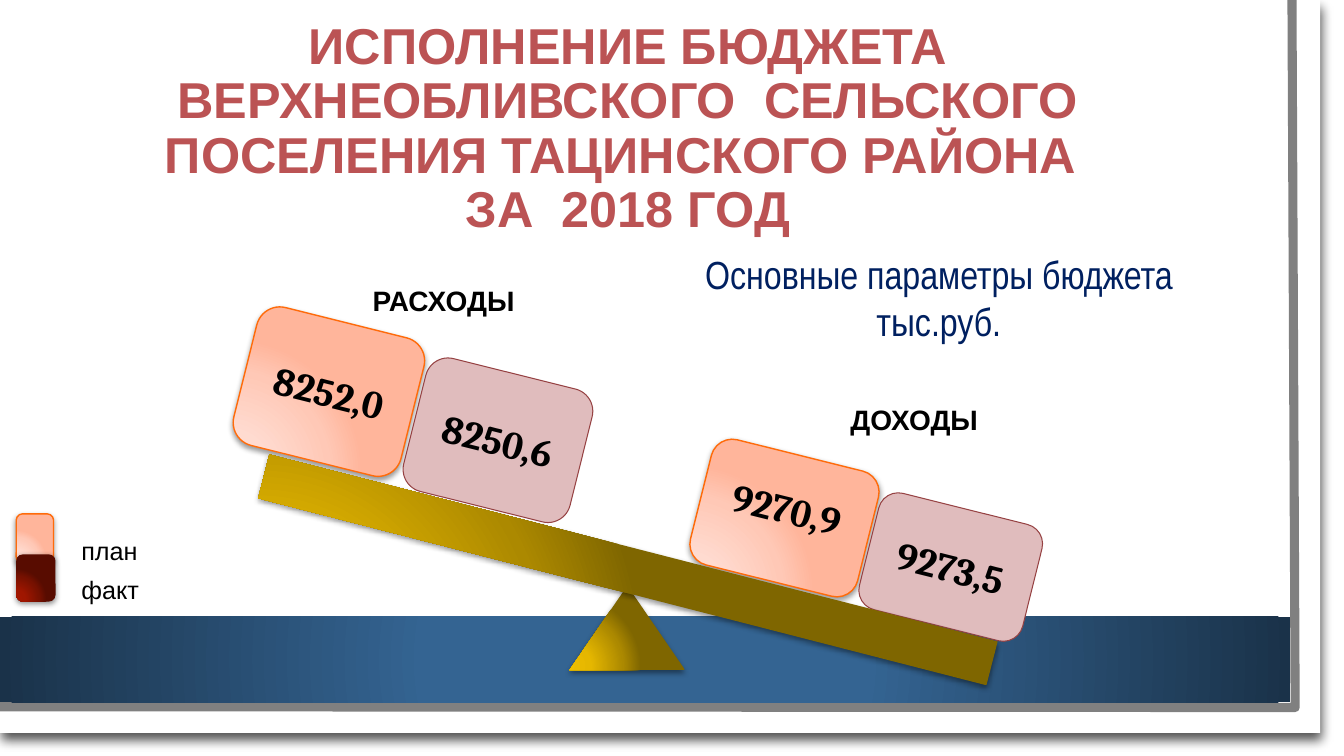
from pptx import Presentation
from pptx.dml.color import RGBColor
from pptx.enum.shapes import MSO_SHAPE
from pptx.enum.text import MSO_ANCHOR, PP_ALIGN
from pptx.oxml import parse_xml
from pptx.oxml.ns import nsdecls, qn
from pptx.util import Cm, Pt

RECT, ROUND = MSO_SHAPE.RECTANGLE, MSO_SHAPE.ROUNDED_RECTANGLE
TRIANGLE = MSO_SHAPE.ISOSCELES_TRIANGLE
TOP, MIDDLE = MSO_ANCHOR.TOP, MSO_ANCHOR.MIDDLE
LEFT, CENTER = PP_ALIGN.LEFT, PP_ALIGN.CENTER

WHITE = RGBColor(0xFF, 0xFF, 0xFF)
BLACK = RGBColor(0, 0, 0)
GRAY = RGBColor(0x80, 0x80, 0x80)
RED = RGBColor(0xBB, 0x53, 0x54)
NAVY = RGBColor(0x00, 0x20, 0x60)
PINK = RGBColor(0xE0, 0xBC, 0xBD)
WINE = RGBColor(0x96, 0x42, 0x43)
ORANGE = RGBColor(0xFF, 0x6B, 0x0A)
BLUE = RGBColor(0x34, 0x64, 0x92)
DARK_BLUE = RGBColor(0x1A, 0x32, 0x49)
GOLDS = [RGBColor.from_string(c) for c in ("EDBE00", "E5B700", "AC8900", "7F6600")]
PEACHES = [RGBColor.from_string(c) for c in ("FFDED5", "FFDBD0", "FFC8B6", "FFB59B")]
MAROONS = [RGBColor.from_string(c) for c in ("A41700", "9F1600", "771100", "580C00")]


def corner_glow(colors):
    return list(zip((0, 30, 75, 100), colors)), (5, 100, 120, 10)


GOLD, PEACH, MAROON = map(corner_glow, (GOLDS, PEACHES, MAROONS))
BAND = [(34, BLUE), (100, DARK_BLUE)], (50, 50, 50, 50)
SHEET_SHADOW = 68, 7.8, 6, 73
SOFT_SHADOW = 42, 4, 1.6, 90
PLAN = {"fill": PEACH, "line": (ORANGE, 1), "shadow": (40, 4, 2, 90)}
FACT = {"fill": PINK, "line": (WINE, 0.75)}


class BudgetSlide:
    """Draws the elements of the budget slide in its shared style."""

    formats = {
        "title": {"name": "Arial", "size": Pt(36), "bold": True},
        "subtitle": {"name": "Arial Narrow", "size": Pt(28), "bold": False},
        "value": {"name": "Cambria", "size": Pt(28), "bold": True},
        "label": {"name": "Arial", "size": Pt(20), "bold": True},
        "legend": {"name": "Arial", "size": Pt(18), "bold": False},
    }

    def __init__(self, prs):
        self.shapes = prs.slides.add_slide(prs.slide_layouts[6]).shapes

    def gradient(self, sp, stops, focus):
        gs = "".join(f'<a:gs pos="{pos * 1000}"><a:srgbClr val="{color}"/></a:gs>'
                     for pos, color in stops)
        rect = " ".join(f'{side}="{v * 1000}"' for side, v in zip("ltrb", focus))
        sp.fill.background()
        sp_pr = sp._element.spPr
        sp_pr.replace(sp_pr.find(qn("a:noFill")), parse_xml(
            f'<a:gradFill {nsdecls("a")} rotWithShape="1"><a:gsLst>{gs}</a:gsLst>'
            f'<a:path path="circle"><a:fillToRect {rect}/></a:path></a:gradFill>'))

    def shadow(self, sp, alpha, blur, dist, angle):
        sp._element.spPr.find(qn("a:effectLst")).append(parse_xml(
            f'<a:outerShdw {nsdecls("a")} blurRad="{Pt(blur)}" dist="{Pt(dist)}" '
            f'dir="{angle * 60000}" rotWithShape="0"><a:srgbClr val="000000">'
            f'<a:alpha val="{alpha * 1000}"/></a:srgbClr></a:outerShdw>'))

    def outline(self, sp, color, width):
        sp.line.color.rgb = color
        sp.line.width = Pt(width)

    def shape(self, kind, box, fill, line=None, shadow=None, rotation=0):
        sp = self.shapes.add_shape(kind, *map(Cm, box))
        sp.rotation = rotation
        sp.shadow.inherit = False
        if isinstance(fill, RGBColor):
            sp.fill.solid()
            sp.fill.fore_color.rgb = fill
        else:
            self.gradient(sp, *fill)
        if line:
            self.outline(sp, *line)
        else:
            sp.line.fill.background()
        if shadow:
            self.shadow(sp, *shadow)
        return sp

    def edge(self, points, color, width):
        start, *rest = [(Cm(x), Cm(y)) for x, y in points]
        builder = self.shapes.build_freeform(*start)
        builder.add_line_segments(rest, close=False)
        sp = builder.convert_to_shape()
        sp.fill.background()
        sp.shadow.inherit = False
        self.outline(sp, color, width)

    def set_text(self, sp, text, style, color=BLACK, align=CENTER, anchor=MIDDLE):
        tf = sp.text_frame
        tf.word_wrap = True
        tf.vertical_anchor = anchor
        p = tf.paragraphs[0]
        p.text = text
        p.alignment = align
        for r in p.runs:
            for key, value in self.formats[style].items():
                setattr(r.font, key, value)
            r.font.color.rgb = color
        return p

    def heading(self, box, text, style, color):
        return self.set_text(self.shapes.add_textbox(*map(Cm, box)), text, style, color)

    def label(self, box, text, style):
        sp = self.shapes.add_textbox(*map(Cm, box))
        self.set_text(sp, text, style, align=LEFT, anchor=TOP)

    def weight(self, box, value, look, lift=0):
        sp = self.shape(ROUND, box, rotation=14, **look)
        self.set_text(sp, value, "value")
        sp.text_frame.margin_bottom = Cm(0.13 + lift)


def main():
    prs = Presentation()
    prs.slide_width, prs.slide_height = Cm(33.87), Cm(19.05)
    s = BudgetSlide(prs)

    s.shape(RECT, (0, 0, 33.27, 18.47), WHITE, shadow=SHEET_SHADOW)
    s.edge([(32.56, 0), (32.64, 17.83), (-0.08, 17.81)], GRAY, 6.5)
    s.shape(RECT, (0, 15.54, 32.51, 2.16), BAND)

    title = s.heading((0.89, 0, 29.87, 6.53),
                      "ИСПОЛНЕНИЕ БЮДЖЕТА ВЕРХНЕОБЛИВСКОГО  СЕЛЬСКОГО "
                      "ПОСЕЛЕНИЯ ТАЦИНСКОГО РАЙОНА \vЗА  2018 ГОД", "title", RED)
    title.line_spacing = 0.9
    s.heading((14, 6.45, 19.32, 2.08),
              "Основные параметры бюджета\vтыс.руб.", "subtitle", NAVY)

    s.shape(TRIANGLE, (14.35, 14.76, 2.92, 2.13), GOLD, shadow=SOFT_SHADOW)
    s.weight((17.6, 11.43, 4.34, 3.25), "9270,9", PLAN, lift=0.5)
    s.weight((21.84, 12.78, 4.24, 3.02), "9273,5", FACT)
    s.weight((6.12, 8.08, 4.34, 3.58), "8252,0", PLAN)
    s.weight((10.39, 9.37, 4.32, 3.45), "8250,6", FACT)
    s.shape(RECT, (6.35, 13.79, 18.95, 1.14), GOLD, shadow=SOFT_SHADOW, rotation=14.4)
    s.label((21.18, 10.01, 4.57, 1.88), "ДОХОДЫ", "label")
    s.label((9.14, 7.01, 5.66, 1.12), "РАСХОДЫ", "label")

    s.shape(ROUND, (0.41, 12.95, 0.94, 1.24), **PLAN)
    s.shape(ROUND, (0.41, 13.97, 0.99, 1.19), MAROON, shadow=SOFT_SHADOW)
    for i, text in enumerate(("план", "факт")):
        s.label((1.8, 13.36 + 0.99 * i, 2.39, 1.02), text, "legend")

    prs.save("out.pptx")


if __name__ == "__main__":
    main()
